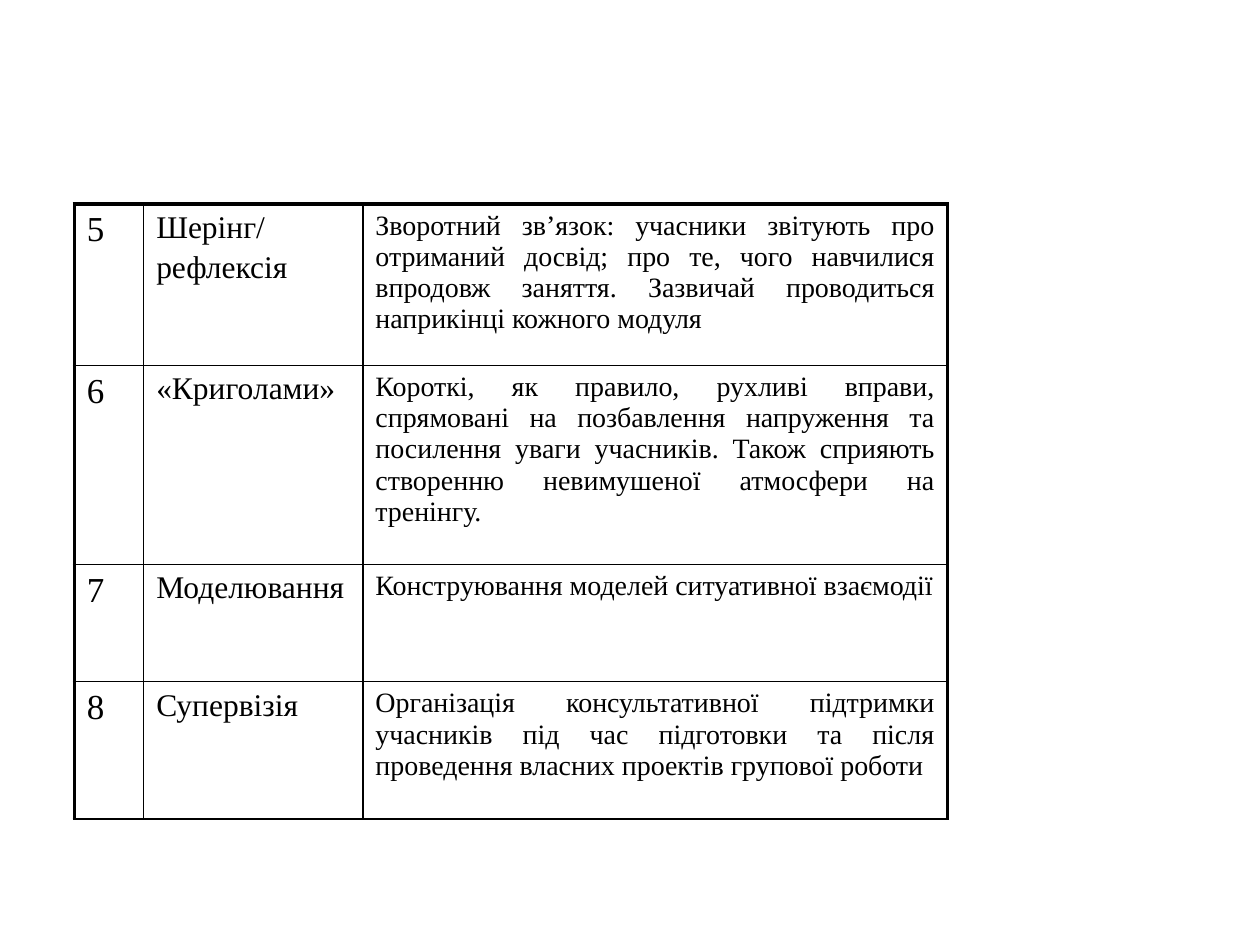
from dataclasses import dataclass

from lxml import etree
from pptx import Presentation
from pptx import util as u
from pptx.dml.color import RGBColor
from pptx.enum import text
from pptx.oxml.ns import qn

COLORS = {"ink": "000000"}
FONT = "Times New Roman"
COL_WIDTHS = (0.55, 1.74, 4.64)
COL_SIZES = (20, 18, 16)
THIN, THICK = 1, 2.25


@dataclass
class Method:
    number: str
    name: tuple[str, ...]
    description: str
    height: float


METHODS = [
    Method("5", ("Шерінг/", "рефлексія"),
           "Зворотний зв’язок: учасники звітують про отриманий досвід; про те, "
           "чого навчилися впродовж заняття. Зазвичай проводиться наприкінці "
           "кожного модуля", 1.28),
    Method("6", ("«Криголами»",),
           "Короткі, як правило, рухливі вправи, спрямовані на позбавлення "
           "напруження та посилення уваги учасників. Також сприяють створенню "
           "невимушеної атмосфери на тренінгу.", 1.58),
    Method("7", ("Моделювання",),
           "Конструювання моделей ситуативної взаємодії", 0.93),
    Method("8", ("Супервізія",),
           "Організація консультативної підтримки учасників під час підготовки "
           "та після проведення власних проектів групової роботи", 1.09),
]


def write_cell(cell, lines: tuple[str, ...], size: float) -> None:
    tf = cell.text_frame
    for i, line in enumerate(lines):
        p = tf.paragraphs[0] if i == 0 else tf.add_paragraph()
        p.alignment = text.PP_ALIGN.JUSTIFY
        if i:
            p.space_before = u.Pt(3)
        r = p.add_run()
        r.text = line
        for key, value in {"name": FONT, "size": u.Pt(size), "bold": False}.items():
            setattr(r.font, key, value)
        r.font.color.rgb = RGBColor.from_string(COLORS["ink"])


def set_borders(cell, widths: dict[str, float]) -> None:
    # Border lines come before the fill in the cell properties
    tcPr = cell._tc.get_or_add_tcPr()
    for i, (side, width) in enumerate(widths.items()):
        ln = etree.Element(qn(f"a:ln{side}"), w=str(u.Pt(width)))
        fill = etree.SubElement(ln, qn("a:solidFill"))
        etree.SubElement(fill, qn("a:srgbClr"), val=COLORS["ink"])
        tcPr.insert(i, ln)


def add_methods_table(s, methods: list[Method]) -> None:
    height = sum(m.height for m in methods)
    table = s.shapes.add_table(
        len(methods), len(COL_WIDTHS), u.Inches(0.59), u.Inches(1.62),
        u.Inches(sum(COL_WIDTHS)), u.Inches(height)).table
    table.first_row = table.horz_banding = False
    for column, width in zip(table.columns, COL_WIDTHS):
        column.width = u.Inches(width)

    last = len(COL_WIDTHS) - 1
    for r, method in enumerate(methods):
        table.rows[r].height = u.Inches(method.height)
        contents = ((method.number,), method.name, (method.description,))
        for c, (lines, size) in enumerate(zip(contents, COL_SIZES)):
            cell = table.cell(r, c)
            cell.fill.background()
            write_cell(cell, lines, size)
            # Heavy outline on the left, top and right; the bottom stays thin
            set_borders(cell, {"L": THICK if c == 0 else THIN,
                               "R": THICK if c == last else THIN,
                               "T": THICK if r == 0 else THIN,
                               "B": THIN})


def main() -> None:
    prs = Presentation()
    prs.slide_width, prs.slide_height = u.Inches(10), u.Inches(7.5)
    s = prs.slides.add_slide(prs.slide_layouts[6])
    add_methods_table(s, METHODS)
    prs.save("out.pptx")


if __name__ == "__main__":
    main()
